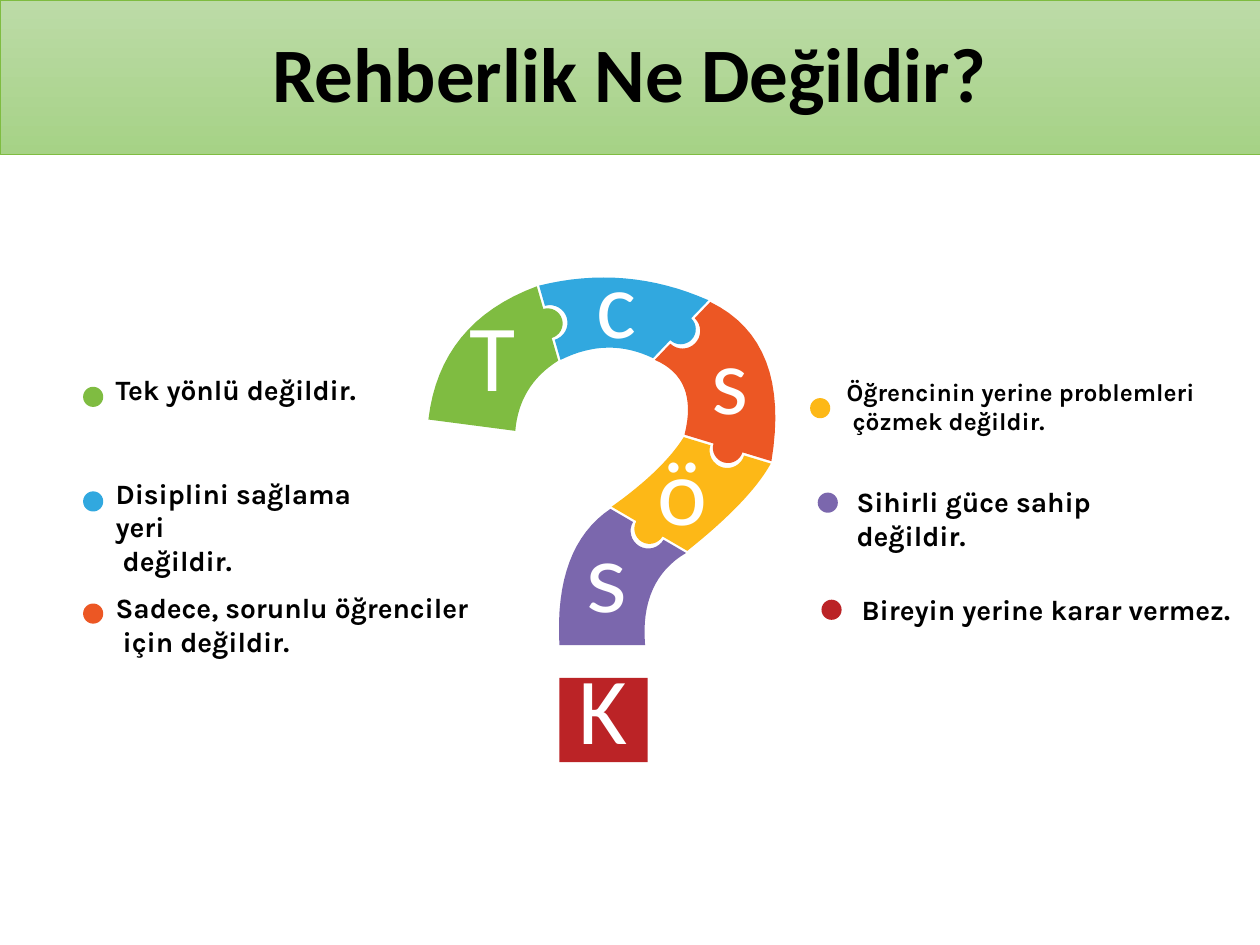
from dataclasses import dataclass
from math import cos, hypot, pi, sin

from pptx import Presentation
from pptx.dml.color import RGBColor
from pptx.enum.shapes import MSO_SHAPE
from pptx.enum.text import MSO_ANCHOR, MSO_AUTO_SIZE, PP_ALIGN
from pptx.util import Cm, Pt

RECTANGLE, OVAL = MSO_SHAPE.RECTANGLE, MSO_SHAPE.OVAL
MIDDLE, CENTER = MSO_ANCHOR.MIDDLE, PP_ALIGN.CENTER
FIT_SHAPE, NO_FIT = MSO_AUTO_SIZE.SHAPE_TO_FIT_TEXT, MSO_AUTO_SIZE.NONE

GREEN, BLUE, ORANGE = "7FBC41", "31A8DF", "EC5724"
YELLOW, PURPLE, RED = "FDB817", "7B67AD", "BB2326"
BLACK, WHITE = "000000", "FFFFFF"
DOT_SIZE = 0.16
LETTER_SIZE = 0.38
KNOB_RADIUS = 0.13
HALF_GAP = 0.01
STEPS = 16


@dataclass
class Joint:
    """Straight cut across the question mark, from inner to outer rim."""
    inner: tuple
    outer: tuple
    knob: bool = True


@dataclass
class Piece:
    """Puzzle piece whose rims pass through the given middle points."""
    color: str
    inner: tuple
    outer: tuple


@dataclass
class Item:
    color: str
    dot: tuple
    left: float
    top: float
    width: float
    lines: list
    size: int = 16


@dataclass
class Letter:
    text: str
    left: float
    top: float
    font: str = "Calibri"


JOINTS = [
    Joint((4.09, 3.42), (3.4, 3.33), False),
    Joint((4.44, 2.86), (4.27, 2.27)),
    Joint((5.19, 2.85), (5.63, 2.39)),
    Joint((5.43, 3.46), (6.12, 3.67)),
    Joint((4.85, 4.03), (5.45, 4.38)),
    Joint((4.44, 5.12), (5.12, 5.12), False),
]
PIECES = [
    Piece(GREEN, (4.19, 3.1), (3.66, 2.68)),
    Piece(BLUE, (4.82, 2.76), (4.96, 2.21)),
    Piece(ORANGE, (5.43, 3.08), (6.08, 2.87)),
    Piece(YELLOW, (5.2, 3.74), (5.87, 4)),
    Piece(PURPLE, (4.52, 4.46), (5.18, 4.68)),
]
ITEMS = [
    Item(GREEN, (0.66, 3.07), 0.82, 2.91, 2.19, ["Tek yönlü değildir."]),
    Item(BLUE, (0.66, 3.9), 0.82, 3.73, 2.47,
         ["Disiplini sağlama yeri", " değildir."]),
    Item(ORANGE, (0.66, 4.79), 0.82, 4.64, 3.03,
         ["Sadece, sorunlu öğrenciler", " için değildir."]),
    Item(YELLOW, (6.43, 3.16), 6.62, 2.94, 3.01,
         ["Öğrencinin yerine problemleri", " çözmek değildir."], 14),
    Item(PURPLE, (6.49, 3.91), 6.7, 3.8, 2.94,
         ["Sihirli güce sahip değildir."]),
    Item(RED, (6.52, 4.76), 6.74, 4.65, 3.21, ["Bireyin yerine karar vermez."]),
]
LETTERS = [
    Letter("T", 3.72, 2.62), Letter("c", 4.7, 2.2), Letter("s", 5.6, 2.8),
    Letter("ö", 5.22, 3.68), Letter("s", 4.63, 4.37, "Lato"),
    Letter("K", 4.59, 5.42),
]


def length(inches: float) -> Cm:
    return Cm(inches * 2.54)


def rgb(value: str) -> RGBColor:
    return RGBColor.from_string(value)


def set_all(target, values: dict) -> None:
    for name, value in values.items():
        setattr(target, name, value)


def paint(shape, color: str) -> None:
    shape.shadow.inherit = False
    shape.fill.solid()
    shape.fill.fore_color.rgb = rgb(color)
    shape.line.fill.background()


def write(para, text: str, color: str, **font) -> None:
    span = para.add_run()
    span.text = text
    set_all(span.font, font)
    span.font.color.rgb = rgb(color)


def draw_preset(page, kind, left, top, width, height, color: str) -> None:
    paint(page.shapes.add_shape(kind, *map(length, (left, top, width, height))), color)


def cut(joint: Joint, side: int) -> list:
    """Points from inner to outer rim; side is -1 before the gap, 1 after it."""
    (x1, y1), (x2, y2) = joint.inner, joint.outer
    if not joint.knob:
        return [joint.inner, joint.outer]
    span = hypot(x2 - x1, y2 - y1)
    ux, uy = (x2 - x1) / span, (y2 - y1) / span
    shift_x, shift_y = -uy * side * HALF_GAP, ux * side * HALF_GAP
    radius = KNOB_RADIUS + side * HALF_GAP
    points = [(x1, y1)]
    for step in range(STEPS + 1):
        along = -radius * cos(pi * step / STEPS)
        ahead = radius * sin(pi * step / STEPS)
        points.append(((x1 + x2) / 2 + along * ux - ahead * uy,
                       (y1 + y2) / 2 + along * uy + ahead * ux))
    points.append((x2, y2))
    return [(x + shift_x, y + shift_y) for x, y in points]


def rim(start: tuple, middle: tuple, end: tuple) -> list:
    """Inner points of the parabola through three points."""
    points = []
    for step in range(1, STEPS):
        t = step / STEPS
        weights = ((1 - t) * (1 - 2 * t), 4 * t * (1 - t), t * (2 * t - 1))
        points.append(tuple(sum(w * value for w, value in zip(weights, values))
                            for values in zip(start, middle, end)))
    return points


def draw_piece(page, piece: Piece, before: Joint, after: Joint) -> None:
    first, last = cut(before, 1), cut(after, -1)
    points = (first + rim(first[-1], piece.outer, last[-1])
              + last[::-1] + rim(last[0], piece.inner, first[0]))
    points = [(length(x), length(y)) for x, y in points]
    builder = page.shapes.build_freeform(*points[0])
    builder.add_line_segments(points[1:], close=True)
    paint(builder.convert_to_shape(), piece.color)


def draw_item(page, item: Item) -> None:
    draw_preset(page, OVAL, *item.dot, DOT_SIZE, DOT_SIZE, item.color)
    height = 0.1 + 0.27 * len(item.lines)
    box = page.shapes.add_textbox(*map(length, (item.left, item.top, item.width, height)))
    frame = box.text_frame
    set_all(frame, {"word_wrap": True, "auto_size": FIT_SHAPE})
    for index, line in enumerate(item.lines):
        para = frame.add_paragraph() if index else frame.paragraphs[0]
        write(para, line, BLACK, name="Karla", size=Pt(item.size), bold=True)


def draw_letter(page, letter: Letter) -> None:
    box = page.shapes.add_textbox(
        *map(length, (letter.left, letter.top, LETTER_SIZE, LETTER_SIZE)))
    frame = box.text_frame
    set_all(frame, {"word_wrap": False, "vertical_anchor": MIDDLE, "margin_left": 0,
                    "margin_right": 0, "margin_top": 0, "margin_bottom": 0})
    frame.paragraphs[0].alignment = CENTER
    write(frame.paragraphs[0], letter.text, WHITE, name=letter.font, size=Pt(54))


def draw_title(page, text: str) -> None:
    title = page.shapes.title
    set_all(title, {"left": 0, "top": 0, "width": length(10), "height": length(1.23)})
    title.fill.gradient()
    title.fill.gradient_angle = 270
    for stop, color in zip(title.fill.gradient_stops, ("BCDBA7", "A6D286")):
        stop.color.rgb = rgb(color)
    title.line.color.rgb = rgb(GREEN)
    title.line.width = Pt(0.5)
    set_all(title.text_frame, {"word_wrap": True, "auto_size": NO_FIT,
                               "vertical_anchor": MIDDLE})
    para = title.text_frame.paragraphs[0]
    set_all(para, {"alignment": CENTER, "line_spacing": 0.9})
    write(para, text, BLACK, name="Calibri", size=Pt(44), bold=True)


def main() -> None:
    deck = Presentation()
    set_all(deck, {"slide_width": length(10), "slide_height": length(7.5)})
    page = deck.slides.add_slide(deck.slide_layouts[5])
    # Question mark
    for piece, before, after in zip(PIECES, JOINTS, JOINTS[1:]):
        draw_piece(page, piece, before, after)
    draw_preset(page, RECTANGLE, 4.44, 5.38, 0.7, 0.67, RED)
    # Statements and letters
    for item in ITEMS:
        draw_item(page, item)
    for letter in LETTERS:
        draw_letter(page, letter)
    # Heading
    draw_title(page, "Rehberlik Ne Değildir?")
    deck.save("out.pptx")


if __name__ == "__main__":
    main()
